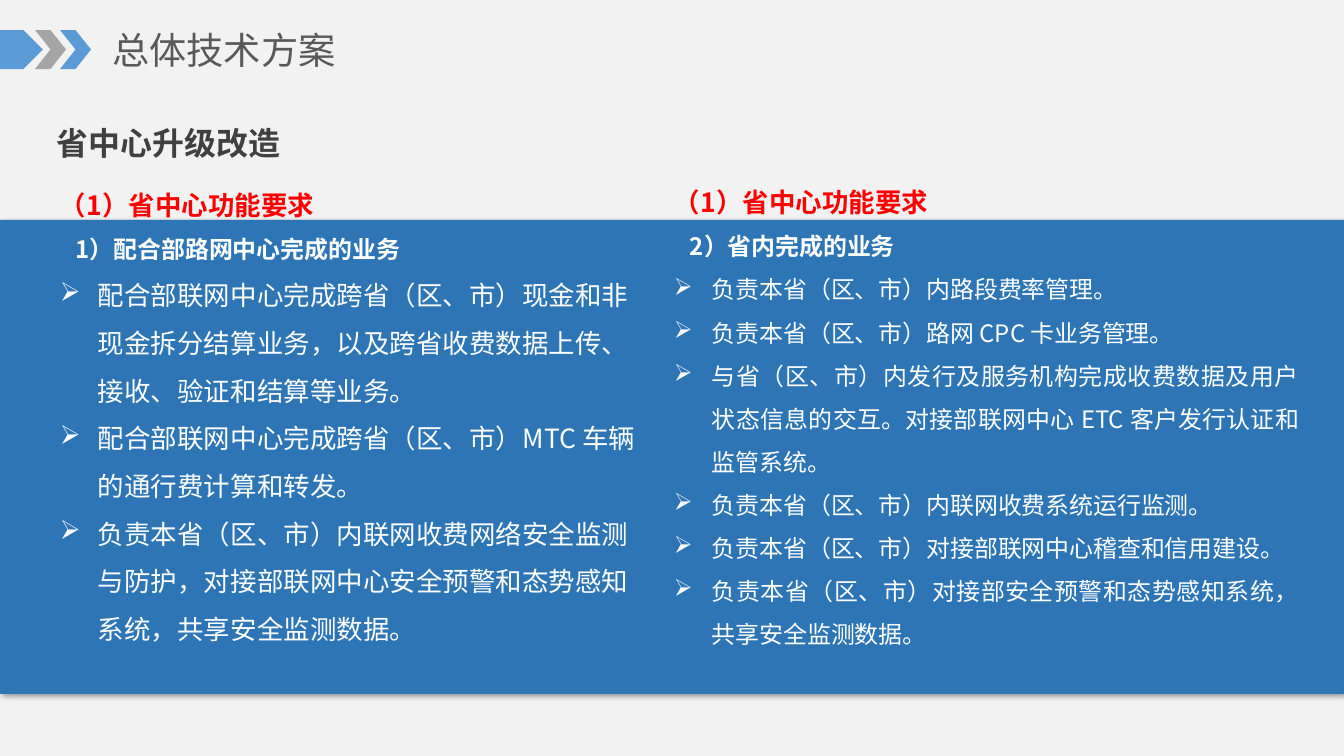
from dataclasses import dataclass

from lxml import etree
from pptx import Presentation
from pptx import util as u
from pptx.dml.color import RGBColor
from pptx.enum import shapes, text
from pptx.oxml import ns

EMU_PER_PX = 914400 / 100.8


@dataclass(frozen=True)
class Theme:
    font: str = "Noto Sans CJK SC"
    background: str = "F2F2F2"
    panel: str = "2E75B6"
    blue: str = "5B9BD5"
    grey: str = "A5A5A5"
    title: str = "595959"
    heading: str = "404040"
    accent: str = "FF0000"
    body: str = "FFFFFF"
    title_size: float = 26.6
    heading_size: float = 22.8
    large: float = 18.9
    small: float = 17.1


@dataclass(frozen=True)
class Box:
    left: int
    top: int
    width: int
    height: int

    def emu(self) -> list[u.Emu]:
        return [px(n) for n in (self.left, self.top, self.width, self.height)]


@dataclass(frozen=True)
class Block:
    box: Box
    kind: shapes.MSO_SHAPE
    color: str


@dataclass(frozen=True)
class Column:
    box: Box
    subheading: str
    duties: tuple[str, ...]
    duty_size: float
    align: text.PP_ALIGN


THEME = Theme()
BULLET_INDENT = 38

PANEL = Block(Box(0, 220, 1344, 474), shapes.MSO_SHAPE.RECTANGLE, THEME.panel)
ARROWS = (
    Block(Box(35, 30, 31, 39), shapes.MSO_SHAPE.CHEVRON, THEME.grey),
    Block(Box(60, 30, 31, 39), shapes.MSO_SHAPE.CHEVRON, THEME.blue),
    Block(Box(0, 30, 43, 39), shapes.MSO_SHAPE.PENTAGON, THEME.blue),
)
COLUMNS = (
    Column(
        Box(50, 168, 614, 489),
        "1）配合部路网中心完成的业务",
        (
            "配合部联网中心完成跨省（区、市）现金和非现金拆分结算业务，以及跨省收费数据上传、接收、验证和结算等业务。",
            "配合部联网中心完成跨省（区、市）MTC 车辆的通行费计算和转发。",
            "负责本省（区、市）内联网收费网络安全监测与防护，对接部联网中心安全预警和态势感知系统，共享安全监测数据。",
        ),
        THEME.large,
        text.PP_ALIGN.LEFT,
    ),
    Column(
        Box(664, 165, 645, 493),
        "2）省内完成的业务",
        (
            "负责本省（区、市）内路段费率管理。",
            "负责本省（区、市）路网 CPC 卡业务管理。",
            "与省（区、市）内发行及服务机构完成收费数据及用户状态信息的交互。对接部联网中心 ETC 客户发行认证和监管系统。",
            "负责本省（区、市）内联网收费系统运行监测。",
            "负责本省（区、市）对接部联网中心稽查和信用建设。",
            "负责本省（区、市）对接部安全预警和态势感知系统，共享安全监测数据。",
        ),
        THEME.small,
        text.PP_ALIGN.JUSTIFY,
    ),
)


def px(length: int) -> u.Emu:
    return u.Emu(round(length * EMU_PER_PX))


def rgb(color: str) -> RGBColor:
    return RGBColor.from_string(color)


def write(paragraph, words: str, size: float, color: str, bold: bool = False,
          align=text.PP_ALIGN.LEFT, spacing: float = 1.5, indent: int = 0,
          bullet: bool = False) -> None:
    """Fill one paragraph; a bulleted one hangs by its indent."""
    paragraph.text = words
    properties = paragraph._p.get_or_add_pPr()
    if indent:
        properties.set("marL", str(px(indent)))
        properties.set("indent", str(px(-indent) if bullet else 0))
    if bullet:
        etree.SubElement(properties, ns.qn("a:buChar"), char="➢")
    paragraph.alignment = align
    paragraph.line_spacing = spacing
    font = paragraph.font
    font.name, font.size, font.bold = THEME.font, u.Pt(size), bold
    font.color.rgb = rgb(color)
    latin = properties.find(ns.qn("a:defRPr")).find(ns.qn("a:latin"))
    latin.addnext(latin.makeelement(ns.qn("a:ea"), {"typeface": THEME.font}))


def add_block(slide, block: Block):
    shape = slide.shapes.add_shape(block.kind, *block.box.emu())
    shape.shadow.inherit = False
    shape.fill.solid()
    shape.fill.fore_color.rgb = rgb(block.color)
    shape.line.fill.background()
    return shape


def add_shadow(shape) -> None:
    effects = shape._element.spPr.find(ns.qn("a:effectLst"))
    shadow = etree.SubElement(
        effects, ns.qn("a:outerShdw"), blurRad=str(u.Pt(4)), dist=str(u.Pt(3)),
        dir=str(45 * 60000), algn="tl", rotWithShape="0")
    color = etree.SubElement(shadow, ns.qn("a:srgbClr"), val="000000")
    etree.SubElement(color, ns.qn("a:alpha"), val="40000")


def add_text_frame(slide, box: Box):
    frame = slide.shapes.add_textbox(*box.emu()).text_frame
    frame.word_wrap = True
    return frame


def add_column(slide, column: Column) -> None:
    frame = add_text_frame(slide, column.box)
    frame.auto_size = text.MSO_AUTO_SIZE.SHAPE_TO_FIT_TEXT
    write(frame.paragraphs[0], "（1）省中心功能要求", THEME.large, THEME.accent, bold=True)
    write(frame.add_paragraph(), column.subheading, THEME.small, THEME.body,
          bold=True, indent=16)
    for duty in column.duties:
        write(frame.add_paragraph(), duty, column.duty_size, THEME.body,
              align=column.align, indent=BULLET_INDENT, bullet=True)


def set_title(slide) -> None:
    title = slide.shapes.title
    title.left, title.top, title.width, title.height = Box(102, 22, 301, 55).emu()
    frame = title.text_frame
    frame.vertical_anchor = text.MSO_ANCHOR.TOP
    frame.auto_size = text.MSO_AUTO_SIZE.SHAPE_TO_FIT_TEXT
    write(frame.paragraphs[0], "总体技术方案", THEME.title_size, THEME.title, spacing=1.0)


def main() -> None:
    deck = Presentation()
    deck.slide_width, deck.slide_height = px(1344), px(756)
    slide = deck.slides.add_slide(deck.slide_layouts[5])
    slide.background.fill.solid()
    slide.background.fill.fore_color.rgb = rgb(THEME.background)

    set_title(slide)
    add_shadow(add_block(slide, PANEL))
    for arrow in ARROWS:
        add_block(slide, arrow)
    heading = add_text_frame(slide, Box(40, 100, 519, 67))
    write(heading.paragraphs[0], "省中心升级改造", THEME.heading_size, THEME.heading,
          bold=True, align=text.PP_ALIGN.JUSTIFY, indent=7)
    for column in COLUMNS:
        add_column(slide, column)
    deck.save("out.pptx")


if __name__ == "__main__":
    main()
